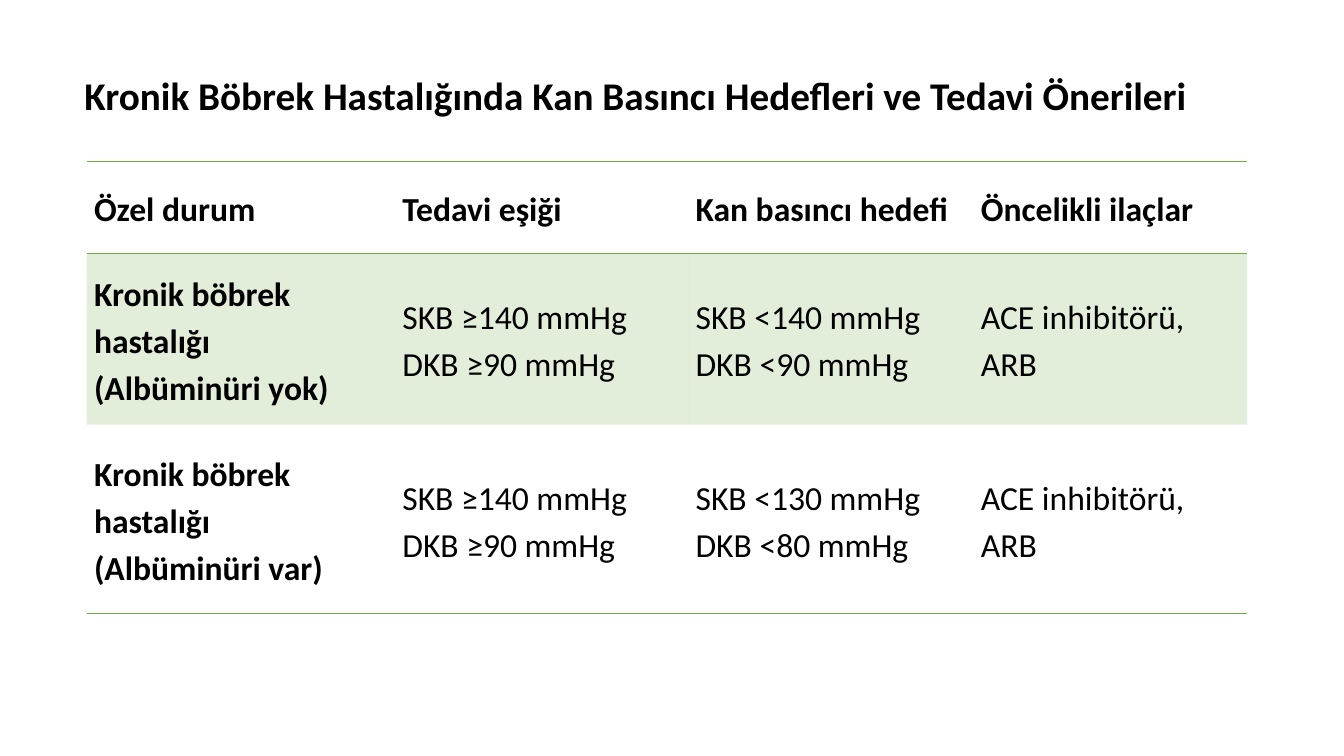
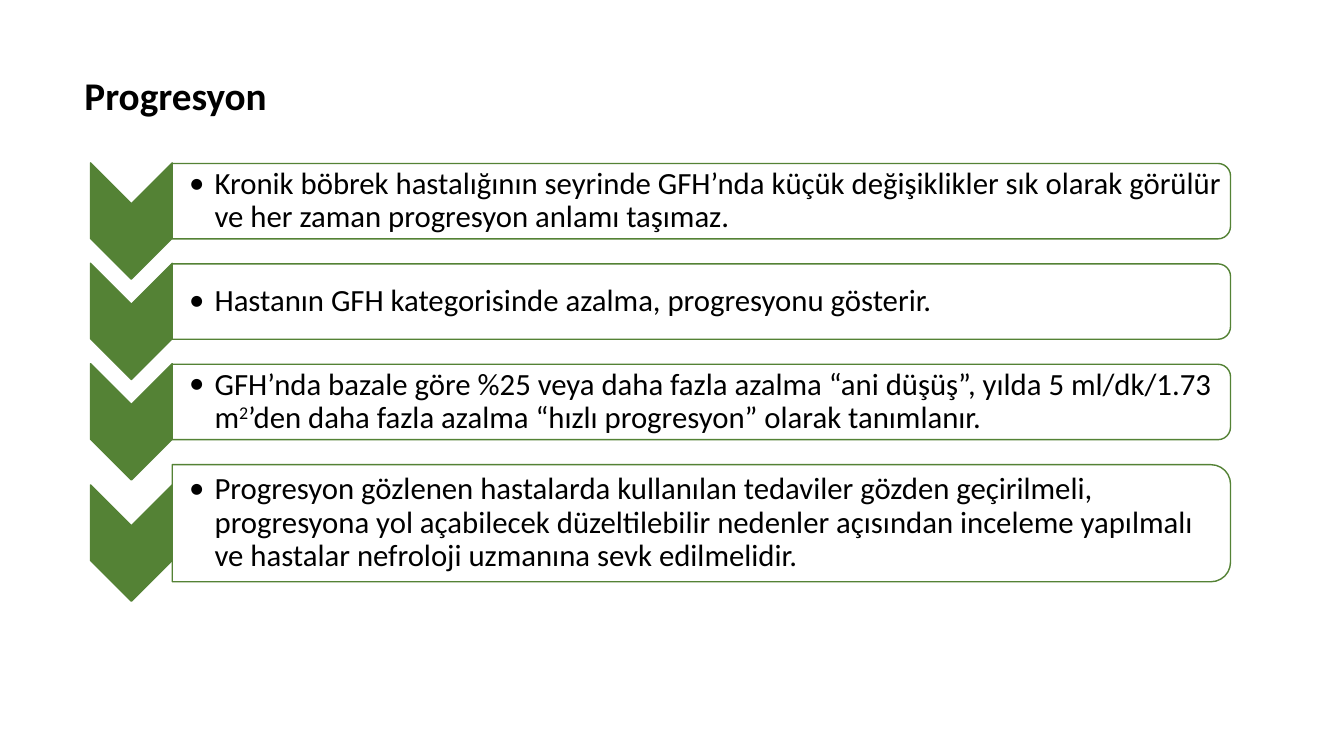
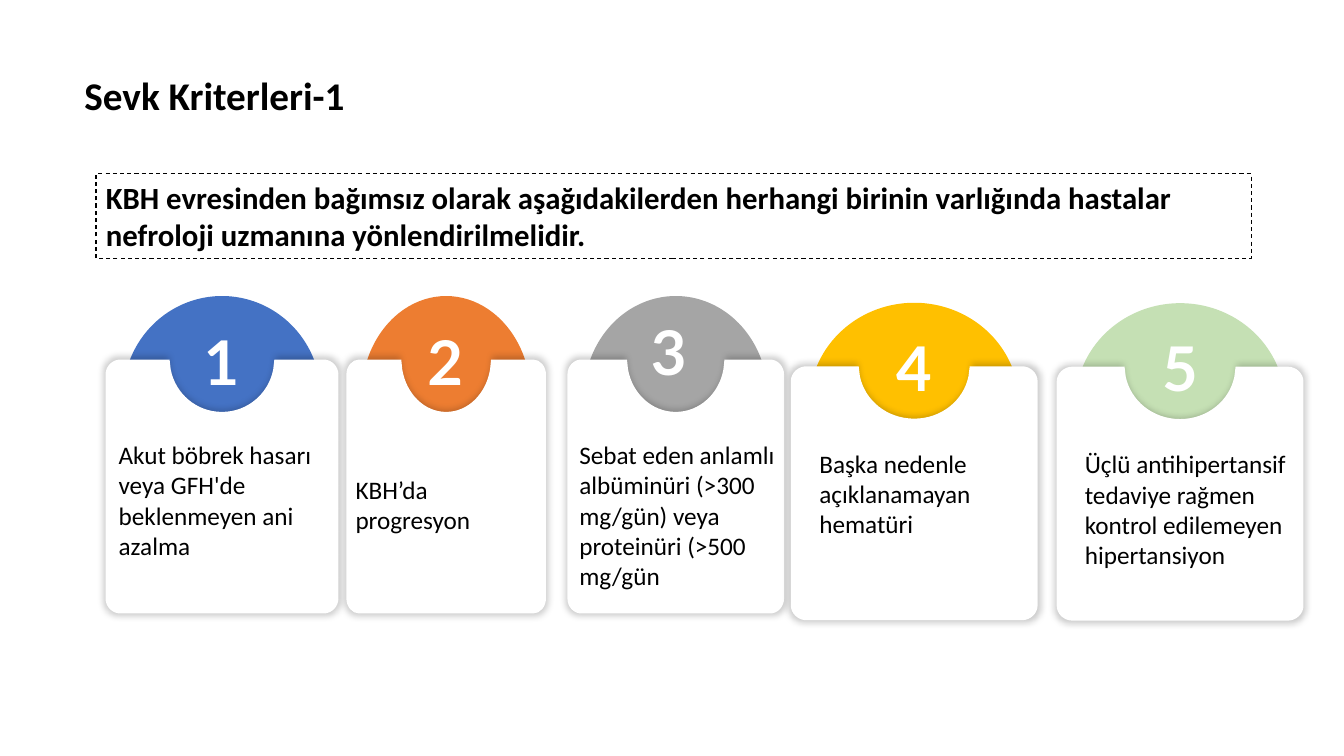
from lxml import etree
from pptx import Presentation
from pptx.dml.color import RGBColor
from pptx.enum.dml import MSO_LINE
from pptx.enum.shapes import MSO_SHAPE
from pptx.enum.text import MSO_ANCHOR, MSO_AUTO_SIZE, PP_ALIGN
from pptx.oxml.ns import qn
from pptx.util import Cm, Pt

CHEVRON, OVAL = MSO_SHAPE.CHEVRON, MSO_SHAPE.OVAL
BAR, RECTANGLE = MSO_SHAPE.ROUND_2_SAME_RECTANGLE, MSO_SHAPE.RECTANGLE
LEFT, CENTER = PP_ALIGN.LEFT, PP_ALIGN.CENTER
MIDDLE, TOP = MSO_ANCHOR.MIDDLE, MSO_ANCHOR.TOP
GROW, DASH = MSO_AUTO_SIZE.SHAPE_TO_FIT_TEXT, MSO_LINE.DASH

BLACK = RGBColor(0x00, 0x00, 0x00)
WHITE = RGBColor(0xFF, 0xFF, 0xFF)
GREEN = RGBColor(0x70, 0xAD, 0x47)
DARK_GREEN = RGBColor(0x54, 0x82, 0x35)
PALE_GREEN = RGBColor(0xC5, 0xE0, 0xB4)
BLUE = RGBColor(0x44, 0x72, 0xC4)
ORANGE = RGBColor(0xED, 0x7D, 0x31)
GRAY = RGBColor(0xA5, 0xA5, 0xA5)
GOLD = RGBColor(0xFF, 0xC0, 0x00)

TITLE_FONT = {"name": "Calibri", "size": Pt(28), "bold": True}
TABLE_FONT = {"name": "Calibri", "size": Pt(24), "bold": False}
BAR_FONT = {"name": "Calibri", "size": Pt(22)}
LEAD_FONT = {"name": "Calibri", "size": Pt(22), "bold": True}
CARD_FONT = {"name": "Calibri", "size": Pt(18)}
NUMBER_FONT = {"name": "Lato", "size": Pt(44), "bold": True}
NO_GRID_STYLE = "{2D5ABB26-0587-4C30-8999-92F81FD0307C}"


def write(frame, paragraphs, font, color=BLACK, align=LEFT, spacing=None):
    """Fill a text frame; each paragraph lists spans, every second one superscript."""
    frame.word_wrap = True
    for index, spans in enumerate(paragraphs):
        para = frame.add_paragraph() if index else frame.paragraphs[0]
        para.alignment = align
        para.line_spacing = spacing
        for position, text in enumerate(spans):
            span = para.add_run()
            span.text = text
            for name, value in font.items():
                setattr(span.font, name, value)
            span.font.color.rgb = color
            if position % 2:
                span.font._element.set("baseline", "30000")


def set_alpha(owner, percent):
    """Make every solid colour below an element partly transparent."""
    for color in owner.iter(qn("a:srgbClr")):
        etree.SubElement(color, qn("a:alpha")).set("val", str(percent * 1000))


deck = Presentation()
deck.slide_width, deck.slide_height = Cm(33.87), Cm(19.05)

# Pages with their titles
pages = []
for title, width in [
    ("Kronik Böbrek Hastalığında Kan Basıncı Hedefleri ve Tedavi Önerileri", 28.98),
    ("Progresyon", 25.4),
    ("Sevk Kriterleri-1", 25.4),
]:
    page = deck.slides.add_slide(deck.slide_layouts[6])
    box = page.shapes.add_textbox(Cm(1.88), Cm(1.68), Cm(width), Cm(1.45))
    write(box.text_frame, [[title]], TITLE_FONT)
    box.text_frame.auto_size = GROW
    pages.append(page)
table_page, progress_page, referral_page = pages

# Blood pressure table
THRESHOLD = "SKB ≥140 mmHg\nDKB ≥90 mmHg"
DRUGS = "ACE inhibitörü, ARB"
rows = [
    ["Özel durum", "Tedavi eşiği", "Kan basıncı hedefi", "Öncelikli ilaçlar"],
    ["Kronik böbrek hastalığı\n(Albüminüri yok)", THRESHOLD,
     "SKB <140 mmHg\nDKB <90 mmHg", DRUGS],
    ["Kronik böbrek hastalığı\n(Albüminüri var)", THRESHOLD,
     "SKB <130 mmHg\nDKB <80 mmHg", DRUGS],
]
row_borders = [("a:lnT", "a:lnB"), (), ("a:lnB",)]
table_frame = table_page.shapes.add_table(
    3, 4, Cm(2.18), Cm(4.06), Cm(29.25), Cm(11.41))
table = table_frame.table
table.horz_banding = False
table._tbl.tblPr.find(qn("a:tableStyleId")).text = NO_GRID_STYLE
for column, width in zip(table.columns, [7.77, 7.39, 7.19, 6.9]):
    column.width = Cm(width)
for row, height in zip(table.rows, [2.32, 4.32, 4.77]):
    row.height = Cm(height)

for row_index, texts in enumerate(rows):
    for column_index, text in enumerate(texts):
        cell = table.cell(row_index, column_index)
        cell.vertical_anchor = MIDDLE
        cell.margin_left = cell.margin_right = Cm(0.19)
        cell.margin_top = cell.margin_bottom = 0
        bold = row_index == 0 or column_index == 0
        write(cell.text_frame, [[line] for line in text.split("\n")],
              {**TABLE_FONT, "bold": bold}, spacing=1.15)
        properties = cell._tc.get_or_add_tcPr()
        for side in row_borders[row_index]:
            border = etree.SubElement(properties, qn(side), w=str(Pt(1)))
            paint = etree.SubElement(border, qn("a:solidFill"))
            etree.SubElement(paint, qn("a:srgbClr"), val=str(GREEN))
        if row_index == 1:
            cell.fill.solid()
            cell.fill.fore_color.rgb = GREEN
            set_alpha(properties, 20)
        else:
            cell.fill.background()

# Progression bars with chevrons
BAR_LEFT, BAR_LENGTH, BAR_PITCH = 4.34, 26.67, 2.53
CHEVRON_LENGTH, CHEVRON_BREADTH, CHEVRON_CENTER = 2.93, 2.06, 3.31
bars = [
    (1.9, ["Kronik böbrek hastalığının seyrinde GFH’nda küçük değişiklikler sık "
           "olarak görülür ve her zaman progresyon anlamı taşımaz."]),
    (1.9, ["Hastanın GFH kategorisinde azalma, progresyonu gösterir."]),
    (1.9, ["GFH’nda bazale göre %25 veya daha fazla azalma “ani düşüş”, yılda "
           "5 ml/dk/1.73 m", "2",
           "’den daha fazla azalma “hızlı progresyon” olarak tanımlanır."]),
    (2.95, ["Progresyon gözlenen hastalarda kullanılan tedaviler gözden "
            "geçirilmeli, progresyona yol açabilecek düzeltilebilir nedenler "
            "açısından inceleme yapılmalı ve hastalar nefroloji uzmanına sevk "
            "edilmelidir."]),
]
for index, (height, spans) in enumerate(bars):
    top = 4.12 + index * BAR_PITCH
    middle = top + height / 2
    bar_center = BAR_LEFT + BAR_LENGTH / 2
    for kind, center_x, center_y, width, length, color in [
        (CHEVRON, CHEVRON_CENTER, middle + 0.5,
         CHEVRON_LENGTH, CHEVRON_BREADTH, DARK_GREEN),
        (BAR, bar_center, middle, height, BAR_LENGTH, WHITE),
    ]:
        shape = progress_page.shapes.add_shape(
            kind, Cm(center_x - width / 2), Cm(center_y - length / 2),
            Cm(width), Cm(length))
        shape.rotation = 90
        shape.shadow.inherit = False
        shape.fill.solid()
        shape.fill.fore_color.rgb = color
        if kind == BAR:
            set_alpha(shape._element.spPr, 90)
        shape.line.color.rgb = DARK_GREEN
        shape.line.width = Pt(1)

    box = progress_page.shapes.add_textbox(
        Cm(BAR_LEFT), Cm(top + 0.09), Cm(26.57), Cm(height - 0.18))
    frame = box.text_frame
    frame.vertical_anchor = MIDDLE
    frame.margin_left = Cm(0.43)
    frame.margin_top = frame.margin_right = frame.margin_bottom = Cm(0.05)
    write(frame, [spans], BAR_FONT, spacing=0.9)
    frame.paragraphs[0].level = 1
    settings = frame.paragraphs[0]._p.get_or_add_pPr()
    settings.set("marL", str(Cm(0.64)))
    settings.set("indent", str(-Cm(0.64)))
    etree.SubElement(settings, qn("a:buFont"), typeface="Calibri")
    etree.SubElement(settings, qn("a:buChar"), char="•")

# Referral cards: colour, card (left, top, width), number and text (left, top, width, height)
CARD_HEIGHT, CORNER, NOTCH_DEPTH = 6.4, 0.38, 1.32
SEGMENTS = "LLCCLLCLCLCLC"
cards = [
    (BLUE, (2.66, 9.06, 5.87), (4.72, 8.03, 1.73, 2.13), (2.74, 10.95, 5.84, 3.33),
     "Akut böbrek hasarı veya GFH'de beklenmeyen ani azalma"),
    (ORANGE, (8.73, 9.06, 5.03), (10.52, 8.03, 1.32, 2.13), (8.71, 11.82, 4.98, 1.91),
     "KBH’da progresyon"),
    (GRAY, (14.3, 9.06, 5.46), (15.37, 7.78, 2.97, 2.13), (14.35, 10.95, 5.46, 4.11),
     "Sebat eden anlamlı albüminüri (>300 mg/gün) veya proteinüri (>500 mg/gün"),
    (GOLD, (19.93, 9.23, 6.22), (21.65, 8.19, 2.77, 2.13), (20.4, 11.17, 5.77, 2.57),
     "Başka nedenle açıklanamayan hematüri"),
    (PALE_GREEN, (26.63, 9.24, 6.22), (28.35, 8.2, 2.77, 2.13),
     (27.09, 11.18, 5.77, 3.33),
     "Üçlü antihipertansif tedaviye rağmen kontrol edilemeyen hipertansiyon"),
]
for number, (color, card_place, number_place, text_place, text) in enumerate(cards, 1):
    left, top, width = card_place
    disc = referral_page.shapes.add_shape(
        OVAL, Cm(left + 0.075 * width), Cm(top - 1.6), Cm(0.85 * width), Cm(5.08))
    disc.shadow.inherit = False
    disc.fill.solid()
    disc.fill.fore_color.rgb = color
    disc.line.fill.background()

    box = referral_page.shapes.add_textbox(*[Cm(length) for length in number_place])
    write(box.text_frame, [[str(number)]], NUMBER_FONT, WHITE, CENTER)
    box.text_frame.auto_size = GROW

    # Card outline: the notch, then the four corners clockwise
    notch = [(0.275, 0), (0.28, 0.25), (0.3, 0.86), (0.39, NOTCH_DEPTH),
             (0.5, NOTCH_DEPTH)]
    notch += [(1 - x, y) for x, y in reversed(notch[:-1])]
    edge = 0.064
    bend_x, bend_y = 0.45 * edge, 0.45 * CORNER
    corner = [(1 - edge, 0), (1 - bend_x, 0), (1, bend_y), (1, CORNER)]
    right = corner + [(x, CARD_HEIGHT - y) for x, y in reversed(corner)]
    around = right + [(1 - x, y) for x, y in reversed(right)]
    points = [(Cm(left + x * width), Cm(top + y))
              for x, y in [(edge, 0)] + notch + around]
    outline = referral_page.shapes.build_freeform(*points[0])
    outline.add_line_segments(points[1:], close=True)
    card = outline.convert_to_shape()

    # Each curve takes three of the outline's points
    lines = iter(list(card._element.iter(qn("a:lnTo"))))
    for segment in SEGMENTS:
        line = next(lines)
        if segment == "C":
            line.tag = qn("a:cubicBezTo")
            for extra in (next(lines), next(lines)):
                line.append(extra[0])
                extra.getparent().remove(extra)

    card.fill.solid()
    card.fill.fore_color.rgb = WHITE
    card.line.fill.background()
    card.shadow.inherit = False
    effects = card._element.spPr.find(qn("a:effectLst"))
    shadow = etree.SubElement(effects, qn("a:outerShdw"), blurRad=str(Pt(5)),
                              sx="102000", sy="102000", algn="ctr", rotWithShape="0")
    etree.SubElement(shadow, qn("a:srgbClr"), val=str(BLACK))
    set_alpha(effects, 20)

    box = referral_page.shapes.add_textbox(*[Cm(length) for length in text_place])
    write(box.text_frame, [[text]], CARD_FONT)
    box.text_frame.auto_size = GROW

# Referral statement
lead = referral_page.shapes.add_shape(
    RECTANGLE, Cm(2.42), Cm(4.38), Cm(29.11), Cm(2.13))
lead.shadow.inherit = False
lead.fill.background()
lead.line.color.rgb = BLACK
lead.line.width = Pt(0.75)
lead.line.dash_style = DASH
lead.text_frame.vertical_anchor = TOP
write(lead.text_frame,
      [["KBH evresinden bağımsız olarak aşağıdakilerden herhangi birinin "
        "varlığında hastalar nefroloji uzmanına yönlendirilmelidir."]], LEAD_FONT)

deck.save("out.pptx")
